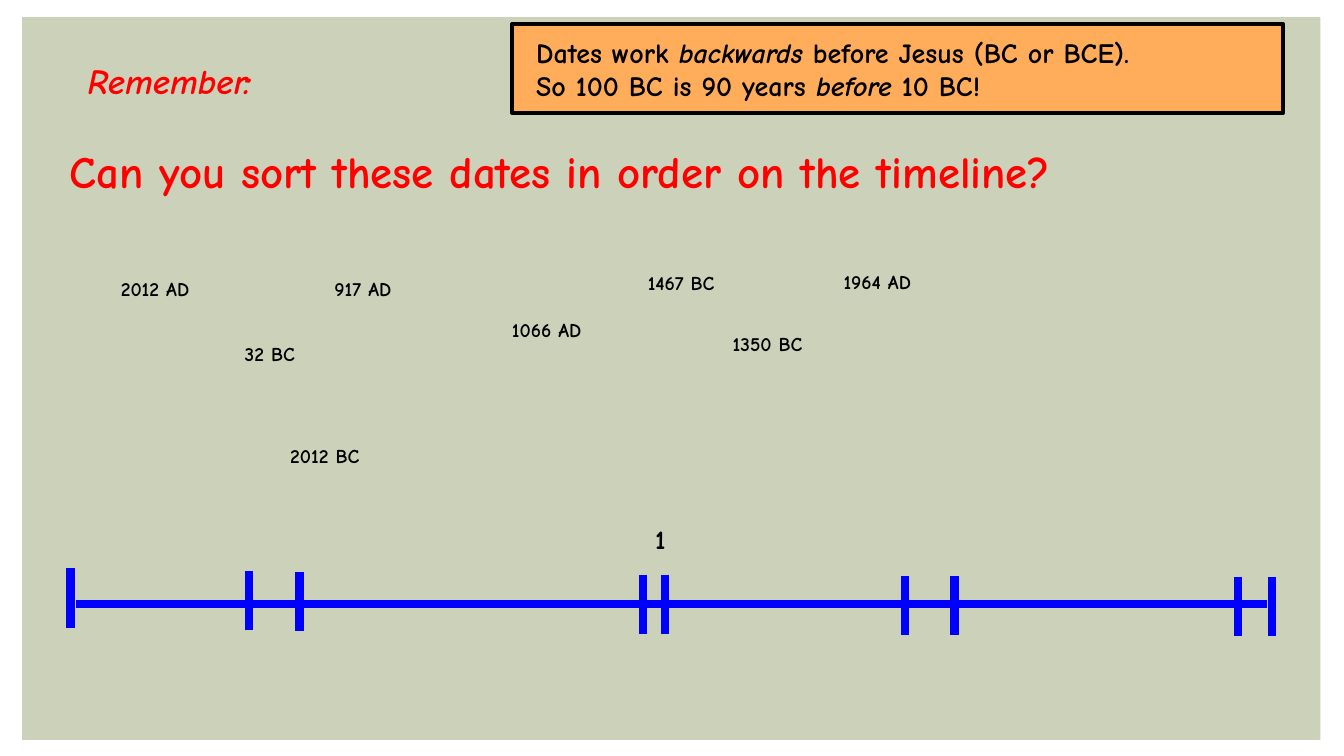
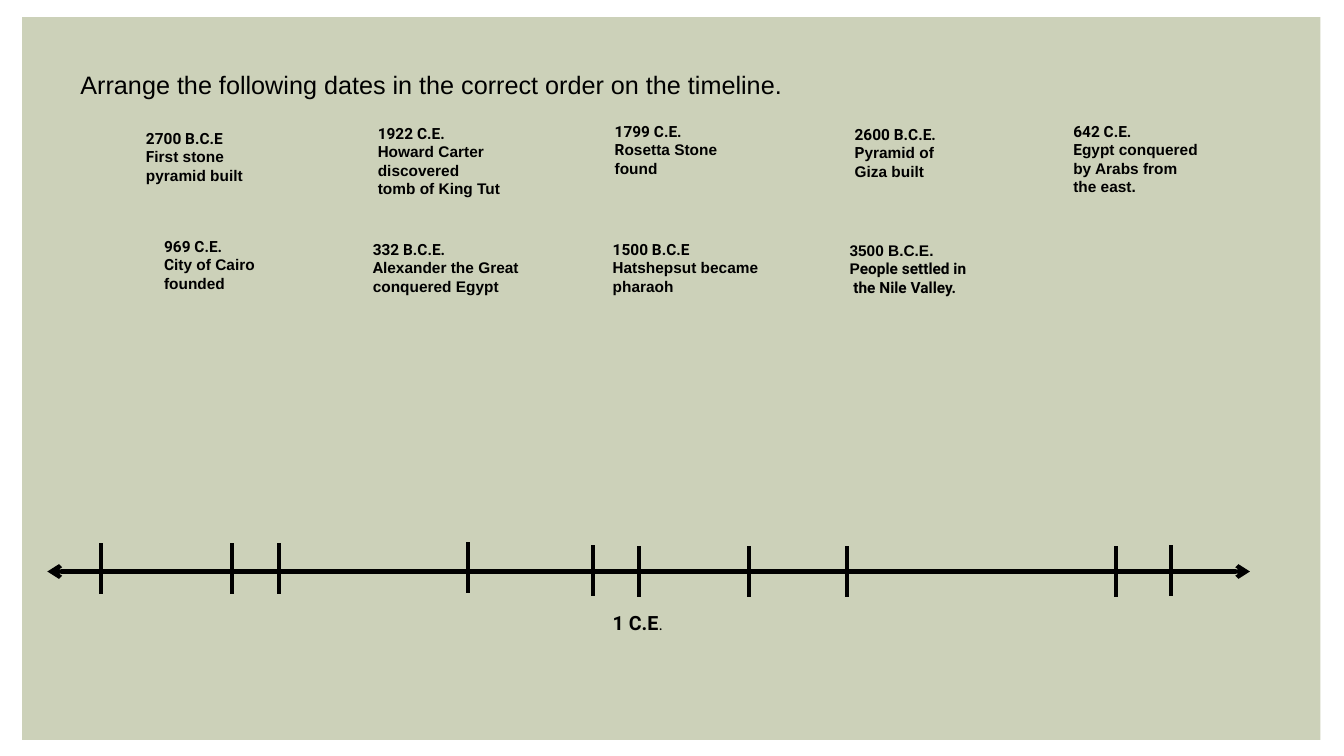
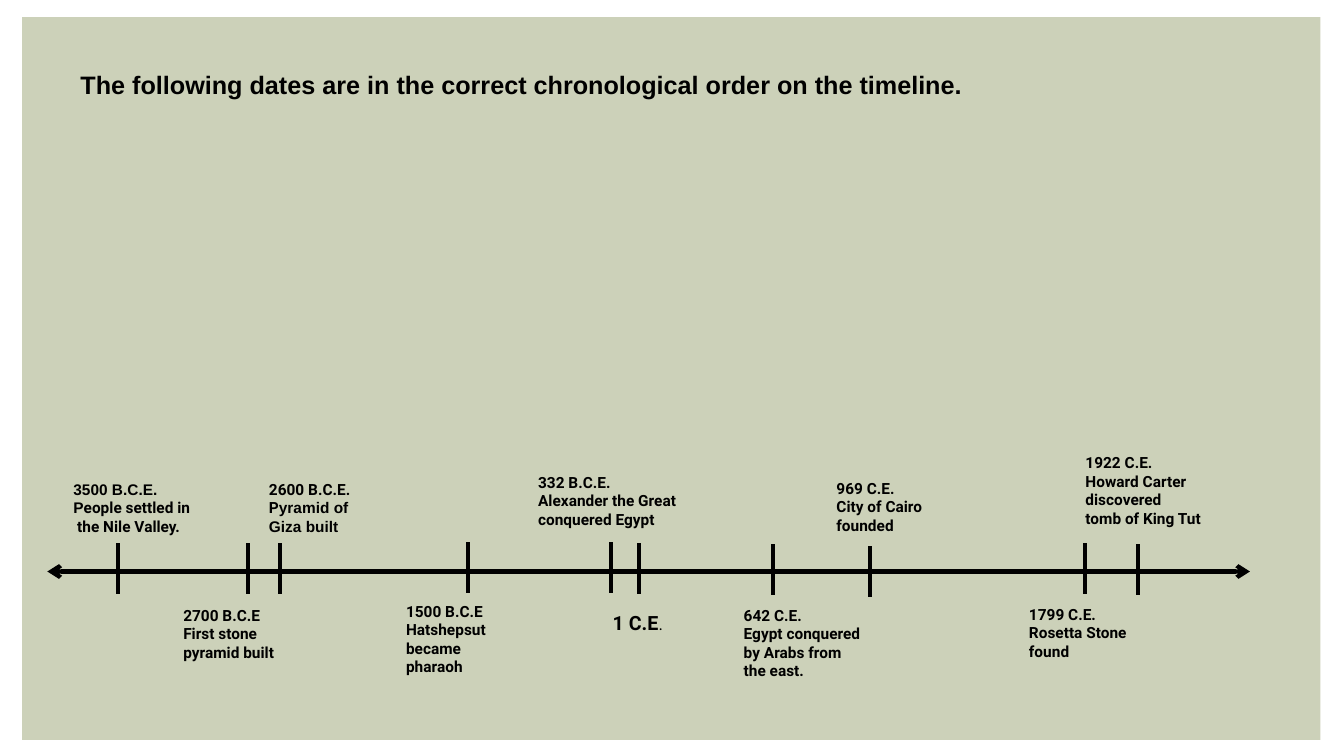
"""Build three slides that sort historical dates on a timeline."""
import dataclasses
from typing import NamedTuple

import lxml.etree
import pptx
import pptx.dml.color
import pptx.enum.shapes
import pptx.enum.text
import pptx.oxml.ns
import pptx.shapes.autoshape
import pptx.shapes.connector
import pptx.slide
import pptx.util

CELL = pptx.util.Inches(0.1)
COLUMNS, ROWS = 133.33, 75


class Face(NamedTuple):
    """Type settings of a run."""
    font: str
    size: float
    color: str = "000000"
    bold: bool = True
    italic: bool = False


class Box(NamedTuple):
    """Left, top, width and height in grid cells."""
    x: float
    y: float
    w: float
    h: float


class Run(NamedTuple):
    """A piece of text with its face."""
    text: str
    face: Face


class Tick(NamedTuple):
    """Column and top row of a timeline mark."""
    x: float
    y: float


class DateLabel(NamedTuple):
    """A loose date with the place of its box."""
    text: str
    x: float
    y: float
    w: float = 17.3


@dataclasses.dataclass(frozen=True)
class Theme:
    """Colours and type of the deck."""
    panel: str = "CCD1B9"
    callout: str = "FFAD5B"
    ink: str = "000000"
    axis: str = "0000FF"
    remember: Face = Face("Comic Neue", 25, "FF0000", italic=True)
    question: Face = Face("Comic Neue", 32, "FF0000")
    rule: Face = Face("Comic Neue", 20)
    date: Face = Face("Comic Neue", 14)
    origin: Face = Face("Comic Neue", 19)
    title: Face = Face("Arial", 18)
    sans: Face = Face("Arial", 11)
    roboto: Face = Face("Roboto", 11)
    era: Face = Face("Roboto", 14)
    era_stop: Face = Face("Roboto", 12, bold=False)


@dataclasses.dataclass(frozen=True)
class Event:
    """A dated event, its caption lines and the width of its box."""
    date: str
    lines: tuple[str, ...]
    w: float


class Placed(NamedTuple):
    """An event at a place, with faces for its opening and its rest."""
    event: Event
    x: float
    y: float
    lead: Face
    rest: Face


THEME = Theme()
SETTLED = Event("3500 B.C.E.", ("People settled in", " the Nile Valley."), 20.7)
PYRAMID = Event("2700 B.C.E", ("First stone", "pyramid built"), 19.3)
GIZA = Event("2600 B.C.E.", ("Pyramid of", "Giza built"), 20)
PHARAOH = Event("1500 B.C.E", ("Hatshepsut became", "pharaoh"), 20.2)
PHARAOH_NARROW = dataclasses.replace(PHARAOH, lines=("Hatshepsut", "became", "pharaoh"), w=19.3)
ALEXANDER = Event("332 B.C.E.", ("Alexander the Great", "conquered Egypt"), 24.3)
ARABS = Event("642 C.E.", ("Egypt conquered", "by Arabs from", "the east."), 21)
ROSETTA = Event("1799 C.E.", ("Rosetta Stone", "found"), 19.3)
CAIRO = Event("969 C.E.", ("City of Cairo", "founded"), 17)
TUT = Event("1922 C.E.", ("Howard Carter", "discovered", "tomb of King Tut"), 20.3)

SANS, ROBOTO = THEME.sans, THEME.roboto
SHUFFLED = (
    Placed(SETTLED, 83.3, 23.4, SANS, ROBOTO),
    Placed(PYRAMID, 13.5, 12.3, ROBOTO, SANS),
    Placed(GIZA, 83.8, 11.9, ROBOTO, SANS),
    Placed(PHARAOH, 59.8, 23.3, ROBOTO, SANS),
    Placed(ALEXANDER, 36, 23.3, ROBOTO, SANS),
    Placed(ARABS, 105.5, 11.6, ROBOTO, SANS),
    Placed(ROSETTA, 60, 11.6, ROBOTO, SANS),
    Placed(CAIRO, 15.3, 23, ROBOTO, SANS),
    Placed(TUT, 36.5, 11.8, ROBOTO, SANS),
)
ORDERED = (
    Placed(SETTLED, 6.3, 47.1, SANS, ROBOTO),
    Placed(PYRAMID, 17.2, 59.6, ROBOTO, ROBOTO),
    Placed(GIZA, 25.7, 47.1, ROBOTO, SANS),
    Placed(PHARAOH_NARROW, 39.3, 59.2, ROBOTO, ROBOTO),
    Placed(ALEXANDER, 52.4, 46.4, ROBOTO, ROBOTO),
    Placed(ARABS, 72.8, 59.6, ROBOTO, ROBOTO),
    Placed(ROSETTA, 101.1, 59.5, ROBOTO, ROBOTO),
    Placed(CAIRO, 82, 47, ROBOTO, ROBOTO),
    Placed(TUT, 106.7, 44.5, ROBOTO, ROBOTO),
)
SHUFFLED_TICKS = (
    Tick(10, 53.9), Tick(23, 53.9), Tick(27.7, 53.9), Tick(46.4, 53.8), Tick(58.8, 54.1),
    Tick(63.4, 54.2), Tick(74.3, 54.2), Tick(84, 54.2), Tick(110.7, 54.2), Tick(116.2, 54.1),
)
ORDERED_TICKS = (
    Tick(11.7, 53.9), Tick(24.6, 53.9), Tick(27.8, 53.9), Tick(46.4, 53.8), Tick(60.6, 53.8),
    Tick(63.4, 53.9), Tick(76.7, 54), Tick(86.3, 54.2), Tick(107.6, 53.9), Tick(112.9, 54),
)
BLUE_TICKS = (
    Tick(7, 56.4), Tick(24.7, 56.6), Tick(29.7, 56.7), Tick(63.8, 57), Tick(66, 57),
    Tick(89.8, 57.1), Tick(94.7, 57.1), Tick(122.8, 57.2), Tick(126.2, 57.2),
)
DATES = (
    DateLabel("2012 AD", 11, 27), DateLabel("2012 BC", 27.8, 43.5),
    DateLabel("1066 AD", 49.8, 31), DateLabel("917 AD", 32.2, 27, 15.7),
    DateLabel("1964 AD", 82.7, 26.3), DateLabel("1467 BC", 63.3, 26.4),
    DateLabel("1350 BC", 71.7, 32.4), DateLabel("32 BC", 23.3, 33.4, 14),
)


def cells(n: float) -> pptx.util.Emu:
    """Turn grid cells into a length."""
    return pptx.util.Emu(round(n * CELL))


def rgb(color: str) -> pptx.dml.color.RGBColor:
    """Turn a hex string into a colour."""
    return pptx.dml.color.RGBColor.from_string(color)


def add_rect(s: pptx.slide.Slide, box: Box, fill: str) -> pptx.shapes.autoshape.Shape:
    """Add a plain filled rectangle."""
    sp = s.shapes.add_shape(pptx.enum.shapes.MSO_SHAPE.RECTANGLE, *map(cells, box))
    sp.shadow.inherit = False
    sp.fill.solid()
    sp.fill.fore_color.rgb = rgb(fill)
    sp.line.fill.background()
    return sp


def add_text(s: pptx.slide.Slide, box: Box, *paragraphs: tuple[Run, ...]) -> None:
    """Add a wrapping text box, one tuple of runs to a paragraph."""
    tf = s.shapes.add_textbox(*map(cells, box)).text_frame
    tf.word_wrap = True
    tf.auto_size = pptx.enum.text.MSO_AUTO_SIZE.SHAPE_TO_FIT_TEXT
    for i, runs in enumerate(paragraphs):
        p = tf.add_paragraph() if i else tf.paragraphs[0]
        for text, face in runs:
            r = p.add_run()
            r.text = text
            r.font.name = face.font
            r.font.size = pptx.util.Pt(face.size)
            r.font.color.rgb = rgb(face.color)
            r.font.bold = face.bold
            r.font.italic = face.italic


def add_line(s: pptx.slide.Slide, start: Tick, end: Tick, color: str,
             width: float) -> pptx.shapes.connector.Connector:
    """Add a straight line without a shadow."""
    line = s.shapes.add_connector(pptx.enum.shapes.MSO_CONNECTOR.STRAIGHT,
                                  *map(cells, (*start, *end)))
    line.line.color.rgb = rgb(color)
    line.line.width = pptx.util.Pt(width)
    lxml.etree.SubElement(line.element.spPr, pptx.oxml.ns.qn("a:effectLst"))
    return line


def add_ticks(s: pptx.slide.Slide, ticks: tuple[Tick, ...], h: float, color: str,
              width: float) -> None:
    """Add the upright marks of a timeline."""
    for x, y in ticks:
        add_line(s, Tick(x, y), Tick(x, y + h), color, width)


def add_event(s: pptx.slide.Slide, placed: Placed) -> None:
    """Add an event whose date and first letter take the lead face."""
    event, x, y, lead, rest = placed
    first, *others = event.lines
    opening = (Run(first, lead),) if lead == rest else (Run(first[0], lead), Run(first[1:], rest))
    h = 1.1 + 1.83 * (1 + len(event.lines))
    add_text(s, Box(x, y, event.w, h), (Run(event.date, lead),), opening,
             *((Run(text, rest),) for text in others))


def add_slide(prs: pptx.presentation.Presentation) -> pptx.slide.Slide:
    """Add a blank slide with the shared panel."""
    s = prs.slides.add_slide(prs.slide_layouts[6])
    add_rect(s, Box(2.2, 1.7, 128.8, 71.7), THEME.panel)
    return s


def add_question_slide(prs: pptx.presentation.Presentation) -> None:
    """Add the slide with loose dates and a blue timeline."""
    s = add_slide(prs)
    add_line(s, Tick(7.5, 59.9), Tick(125.7, 59.9), THEME.axis, 6)
    add_ticks(s, BLUE_TICKS, 5.9, THEME.axis, 6)
    add_text(s, Box(7.7, 5.4, 31.2, 5.2), (Run("Remember:", THEME.remember),))
    callout = add_rect(s, Box(50.8, 2.4, 76.5, 8.8), THEME.callout)
    callout.line.color.rgb = rgb(THEME.ink)
    callout.line.width = pptx.util.Pt(3)
    rule = THEME.rule
    stress = rule._replace(italic=True)
    add_text(s, Box(52.2, 3, 70, 7.7),
             (Run("Dates work ", rule), Run("backwards", stress),
              Run(" before Jesus (BC or BCE).", rule)),
             (Run("So 100 BC is 90 years ", rule), Run("before", stress), Run(" 10 BC!", rule)))
    add_text(s, Box(5.9, 13.8, 110.2, 6.4),
             (Run("Can you sort these dates in order on the timeline?", THEME.question),))
    for text, x, y, w in DATES:
        add_text(s, Box(x, y, w, 3.4), (Run(text, THEME.date),))
    add_text(s, Box(64, 51.4, 8.7, 4.2), (Run("1", THEME.origin),))


def add_event_slide(prs: pptx.presentation.Presentation, title: Run,
                    events: tuple[Placed, ...], ticks: tuple[Tick, ...]) -> None:
    """Add a slide with events and a black double-headed timeline."""
    s = add_slide(prs)
    add_text(s, Box(7, 6.4, 117, 4), (title,))
    for placed in events:
        add_event(s, placed)
    add_ticks(s, ticks, 5, THEME.ink, 3)
    add_text(s, Box(59.8, 60.1, 12, 3.4), (Run("1 C.E", THEME.era), Run(".", THEME.era_stop)))
    axis = add_line(s, Tick(4.7, 56.7), Tick(124, 56.7), THEME.ink, 3)
    ln = axis.element.spPr.find(pptx.oxml.ns.qn("a:ln"))
    for end in ("a:headEnd", "a:tailEnd"):
        lxml.etree.SubElement(ln, pptx.oxml.ns.qn(end), type="arrow")


def main() -> None:
    """Build and save the deck."""
    prs = pptx.Presentation()
    prs.slide_width, prs.slide_height = cells(COLUMNS), cells(ROWS)
    add_question_slide(prs)
    add_event_slide(
        prs, Run("Arrange the following dates in the correct order on the timeline.",
                 THEME.title._replace(bold=False)), SHUFFLED, SHUFFLED_TICKS)
    add_event_slide(
        prs, Run("The following dates are in the correct chronological order on the timeline.",
                 THEME.title), ORDERED, ORDERED_TICKS)
    prs.save("out.pptx")


if __name__ == "__main__":
    main()
